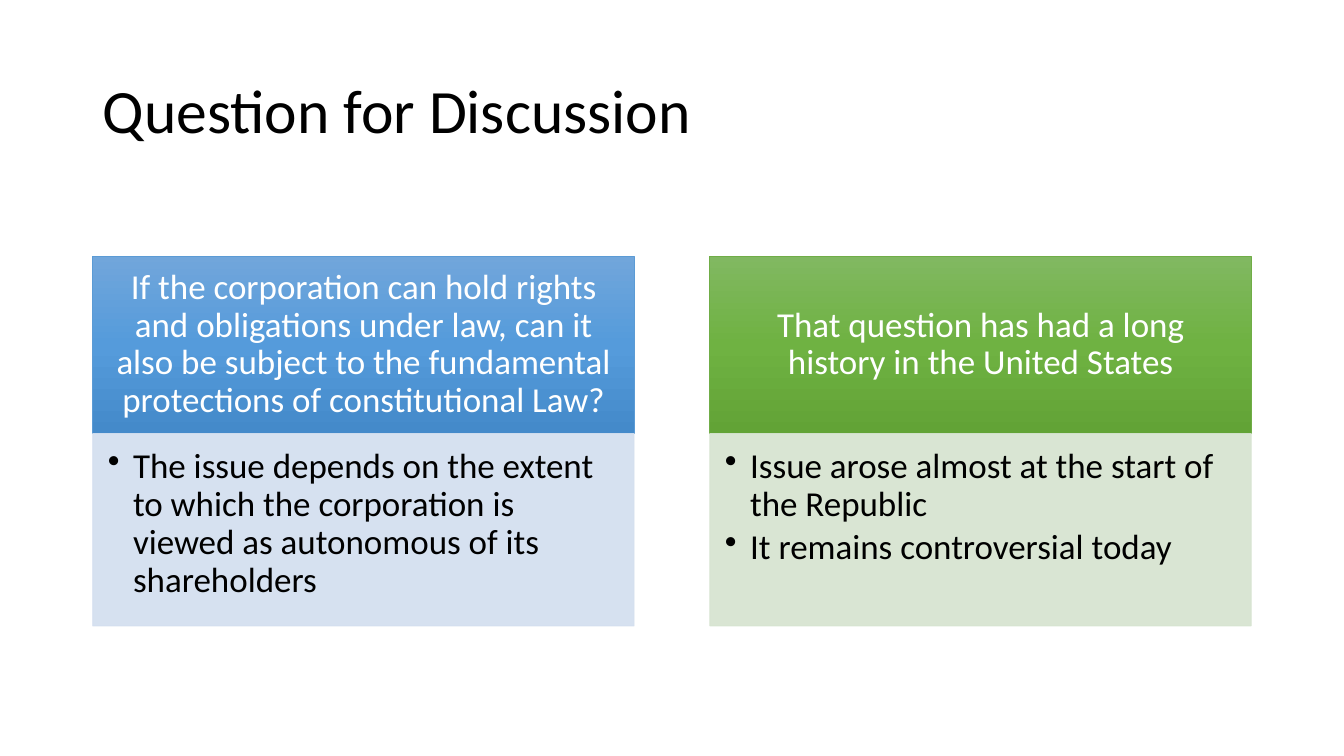
import copy
import dataclasses

import pptx
import pptx.dml.color
import pptx.enum.shapes
import pptx.enum.text
import pptx.oxml
import pptx.oxml.ns
import pptx.util

Inches = pptx.util.Inches
Pt = pptx.util.Pt
ALIGN = pptx.enum.text.PP_ALIGN
ANCHOR = pptx.enum.text.MSO_ANCHOR


@dataclasses.dataclass(frozen=True)
class Theme:
    font: str = "Calibri"
    title_size: int = 44
    body_size: int = 25
    dark: str = "000000"
    light: str = "FFFFFF"
    line_width: float = 0.5
    line_spacing: float = 0.9
    panel_opacity: int = 90


THEME = Theme()
SLIDE_WIDTH, SLIDE_HEIGHT = 13.33, 7.5
MARGIN, GUTTER = 0.92, 0.75
COLUMN_WIDTH = (SLIDE_WIDTH - 2 * MARGIN - GUTTER) / 2
TITLE_ROW = (0.4, 1.45)
HEADER_ROW = (2.54, 1.76)
PANEL_ROW = (4.3, 1.91)

COLUMNS = [
    {
        "header": "If the corporation can hold rights and obligations under law, can it "
                  "also be subject to the fundamental protections of constitutional Law?",
        "points": ["The issue depends on the extent to which the corporation is "
                   "viewed as autonomous of its shareholders"],
        "gradient": ["71A6DB", "559BDB", "448ACA"],
        "border": "5B9BD5",
        "tint": "D2DEEF",
    },
    {
        "header": "That question has had a long history in the United States",
        "points": ["Issue arose almost at the start of the Republic",
                   "It remains controversial today"],
        "gradient": ["81B861", "6FB242", "62A336"],
        "border": "70AD47",
        "tint": "D5E3CF",
    },
]


def rgb(value):
    return pptx.dml.color.RGBColor.from_string(value)


def set_values(target, values):
    for name, value in values.items():
        setattr(target, name, value)


def write_text(shape, texts, size, color, align, anchor, insets, bullet=False):
    frame = shape.text_frame
    margins = zip(("left", "top", "right", "bottom"), insets)
    set_values(frame, {f"margin_{side}": Inches(inset) for side, inset in margins})
    set_values(frame, {"word_wrap": True, "vertical_anchor": anchor,
                       "auto_size": pptx.enum.text.MSO_AUTO_SIZE.NONE})
    for index, text in enumerate(texts):
        paragraph = frame.add_paragraph() if index else frame.paragraphs[0]
        paragraph.text = text
        set_values(paragraph, {"alignment": align, "line_spacing": THEME.line_spacing})
        if bullet:
            paragraph.space_after = Pt(size * 0.15)
            add_bullet(paragraph)
        set_values(paragraph.runs[0].font,
                   {"name": THEME.font, "size": Pt(size), "bold": False})
        paragraph.runs[0].font.color.rgb = rgb(color)


def add_bullet(paragraph, indent=0.25):
    properties = paragraph._p.get_or_add_pPr()
    properties.set("marL", str(Inches(indent)))
    properties.set("indent", str(-Inches(indent)))
    mark = pptx.oxml.ns.qn("a:buChar")
    properties.append(properties.makeelement(mark, {"char": "•"}))


def add_box(slide, column, row, border):
    left = MARGIN + column * (COLUMN_WIDTH + GUTTER)
    top, height = row
    shape = slide.shapes.add_shape(
        pptx.enum.shapes.MSO_SHAPE.RECTANGLE,
        Inches(left), Inches(top), Inches(COLUMN_WIDTH), Inches(height))
    shape.shadow.inherit = False
    shape.line.width = Pt(THEME.line_width)
    shape.line.color.rgb = rgb(border)
    return shape


def fill_gradient(shape, colors):
    """Fill from top to bottom with evenly spaced colours."""
    shape.fill.gradient()
    shape.fill.gradient_angle = 270
    stop_list = shape._element.spPr.find(".//" + pptx.oxml.ns.qn("a:gsLst"))
    while len(stop_list) < len(colors):
        stop_list.append(copy.deepcopy(stop_list[-1]))
    for index, (stop, color) in enumerate(zip(shape.fill.gradient_stops, colors)):
        stop.color.rgb = rgb(color)
        stop.position = index / (len(colors) - 1)


def set_opacity(shape, percent):
    """Make both fill and outline partly transparent."""
    for color in shape._element.spPr.iter(pptx.oxml.ns.qn("a:srgbClr")):
        alpha = pptx.oxml.ns.qn("a:alpha")
        color.append(color.makeelement(alpha, {"val": str(percent * 1000)}))


def add_title(slide, text):
    title = slide.shapes.title
    top, height = TITLE_ROW
    set_values(title, {"left": Inches(MARGIN), "top": Inches(top),
                       "width": Inches(SLIDE_WIDTH - 2 * MARGIN),
                       "height": Inches(height)})
    write_text(title, [text], THEME.title_size, THEME.dark, ALIGN.LEFT,
               ANCHOR.MIDDLE, (0.1, 0.05, 0.1, 0.05))


def add_header(slide, column, content):
    header = add_box(slide, column, HEADER_ROW, content["border"])
    fill_gradient(header, content["gradient"])
    write_text(header, [content["header"]], THEME.body_size, THEME.light,
               ALIGN.CENTER, ANCHOR.MIDDLE, (0.19, 0.11, 0.19, 0.11))


def add_panel(slide, column, content):
    panel = add_box(slide, column, PANEL_ROW, content["tint"])
    panel.fill.solid()
    panel.fill.fore_color.rgb = rgb(content["tint"])
    set_opacity(panel, THEME.panel_opacity)
    write_text(panel, content["points"], THEME.body_size, THEME.dark,
               ALIGN.LEFT, ANCHOR.TOP, (0.15, 0.15, 0.19, 0.22), bullet=True)


def main():
    presentation = pptx.Presentation()
    set_values(presentation, {"slide_width": Inches(SLIDE_WIDTH),
                              "slide_height": Inches(SLIDE_HEIGHT)})
    slide = presentation.slides.add_slide(
        presentation.slide_layouts.get_by_name("Title Only"))
    add_title(slide, "Question for Discussion")
    for column, content in enumerate(COLUMNS):
        add_header(slide, column, content)
        add_panel(slide, column, content)
    presentation.save("out.pptx")


if __name__ == "__main__":
    main()
